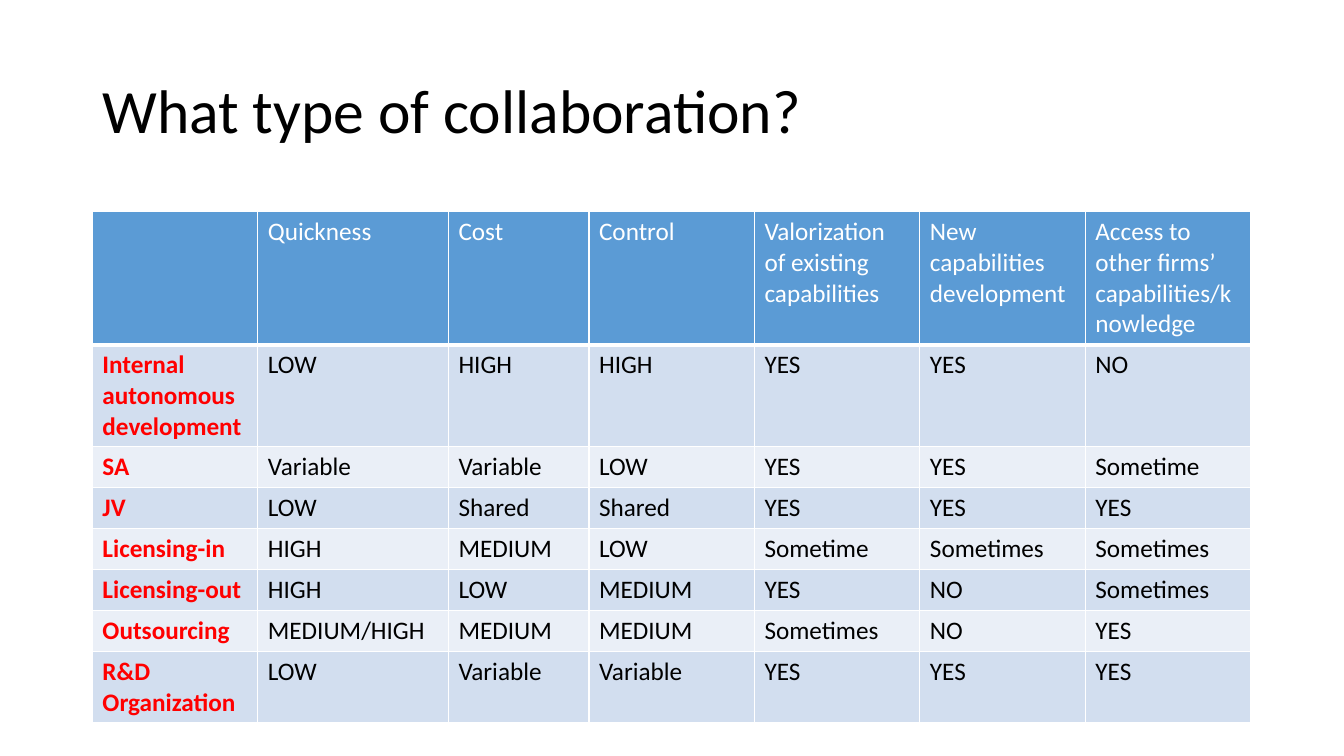
import pptx
import pptx.dml.color
import pptx.enum.text
import pptx.oxml
import pptx.oxml.ns
import pptx.util

Pt = pptx.util.Pt
FONT = "Calibri"
COLORS = {
    "title": "000000",
    "header_fill": "5B9BD5",
    "header_text": "FFFFFF",
    "odd_row": "D2DEEF",
    "even_row": "EAEFF7",
    "option": "FF0000",
    "body": "000000",
    "border": "FFFFFF",
}

LEFT, WIDTH = 66, 828
COLUMN_WIDTHS = [118.2, 136.2, 100.4] + [118.2] * 4
ROW_HEIGHTS = [95, 73] + [29.2] * 5 + [51]

ROWS = [
    ["", "Quickness", "Cost", "Control", "Valorization of existing capabilities",
     "New capabilities development", "Access to other firms’ capabilities/knowledge"],
    ["Internal autonomous development", "LOW", "HIGH", "HIGH", "YES", "YES", "NO"],
    ["SA", "Variable", "Variable", "LOW", "YES", "YES", "Sometime"],
    ["JV", "LOW", "Shared", "Shared", "YES", "YES", "YES"],
    ["Licensing-in", "HIGH", "MEDIUM", "LOW", "Sometime", "Sometimes", "Sometimes"],
    ["Licensing-out", "HIGH", "LOW", "MEDIUM", "YES", "NO", "Sometimes"],
    ["Outsourcing", "MEDIUM/HIGH", "MEDIUM", "MEDIUM", "Sometimes", "NO", "YES"],
    ["R&D Organization", "LOW", "Variable", "Variable", "YES", "YES", "YES"],
]


def rgb(name):
    return pptx.dml.color.RGBColor.from_string(COLORS[name])


def style_font(font, size, color, bold=False):
    font.name = FONT
    font.size = Pt(size)
    font.bold = bold
    font.color.rgb = rgb(color)


def add_title(slide, text):
    shape = slide.shapes.add_textbox(Pt(LEFT), Pt(28.8), Pt(WIDTH), Pt(104.4))
    text_frame = shape.text_frame
    text_frame.word_wrap = True
    text_frame.vertical_anchor = pptx.enum.text.MSO_ANCHOR.MIDDLE
    text_frame.text = text
    paragraph = text_frame.paragraphs[0]
    paragraph.line_spacing = 0.9
    style_font(paragraph.runs[0].font, 44, "title")


def set_borders(cell, bottom_width):
    properties = cell._tc.get_or_add_tcPr()
    widths = {"lnL": 1, "lnR": 1, "lnT": 1, "lnB": bottom_width}
    for side, width in widths.items():
        properties.append(pptx.oxml.parse_xml(
            f'<a:{side} {pptx.oxml.ns.nsdecls("a")} w="{Pt(width)}">'
            f'<a:solidFill><a:srgbClr val="{COLORS["border"]}"/></a:solidFill>'
            f'</a:{side}>'))


def fill_cell(cell, text, fill, color, bold, bottom_width):
    set_borders(cell, bottom_width)
    cell.fill.solid()
    cell.fill.fore_color.rgb = rgb(fill)
    cell.text_frame.text = text
    paragraph = cell.text_frame.paragraphs[0]
    if text:
        style_font(paragraph.runs[0].font, 18, color, bold)


def add_comparison_table(slide, rows):
    table = slide.shapes.add_table(
        len(rows), len(rows[0]), Pt(LEFT), Pt(151.2), Pt(WIDTH), Pt(sum(ROW_HEIGHTS))).table
    for column, width in zip(table.columns, COLUMN_WIDTHS):
        column.width = Pt(width)
    for row, height in zip(table.rows, ROW_HEIGHTS):
        row.height = Pt(height)

    for row_index, texts in enumerate(rows):
        for column_index, text in enumerate(texts):
            cell = table.cell(row_index, column_index)
            if row_index == 0:
                fill_cell(cell, text, "header_fill", "header_text", False, 3)
            else:
                band = "odd_row" if row_index % 2 else "even_row"
                is_option = column_index == 0
                color = "option" if is_option else "body"
                fill_cell(cell, text, band, color, is_option, 1)


def main():
    presentation = pptx.Presentation()
    presentation.slide_width = Pt(960)
    presentation.slide_height = Pt(540)
    slide = presentation.slides.add_slide(presentation.slide_layouts[6])

    # Heading
    add_title(slide, "What type of collaboration?")

    # Collaboration types against criteria
    add_comparison_table(slide, ROWS)

    presentation.save("out.pptx")


if __name__ == "__main__":
    main()
